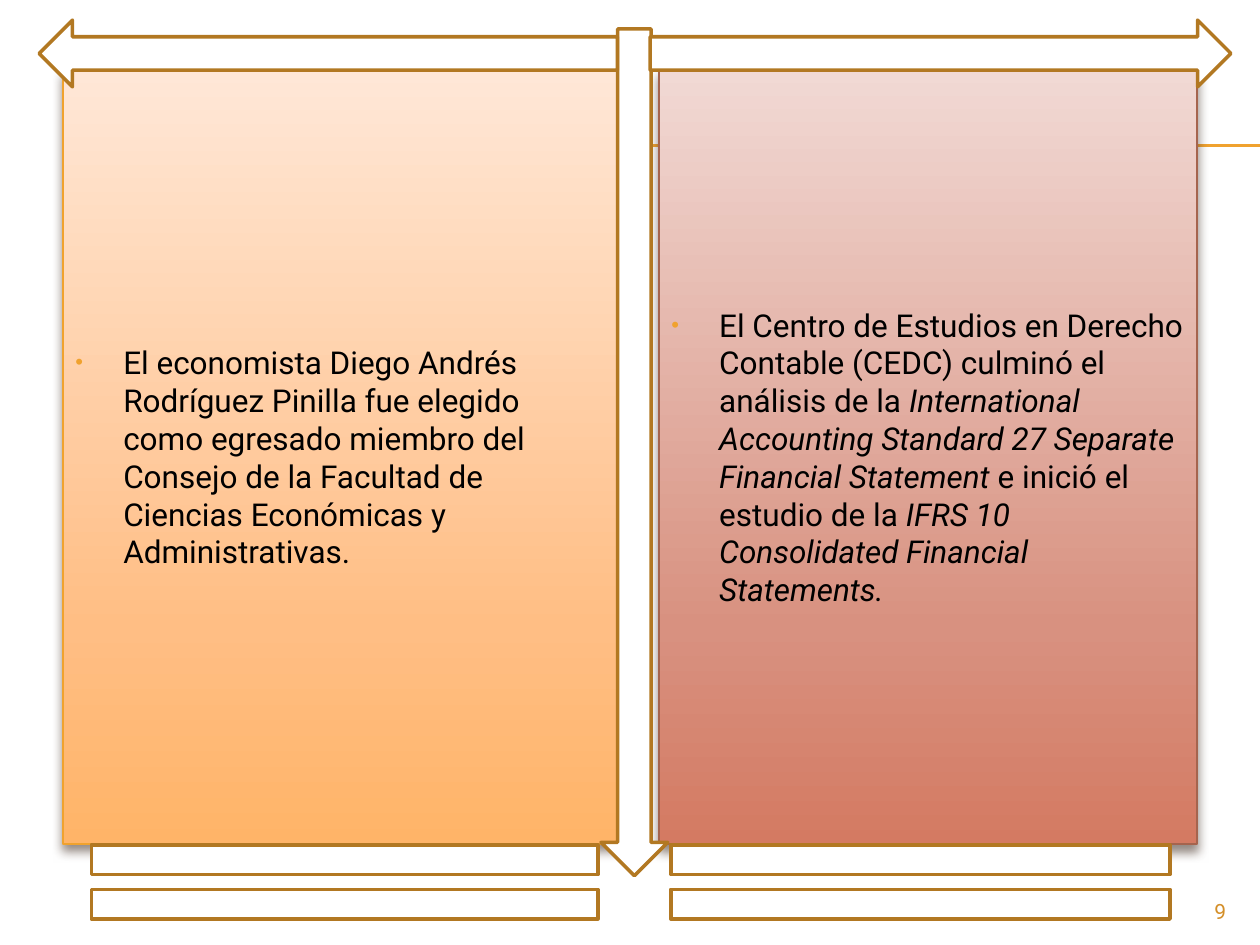
from lxml import etree
from pptx import Presentation
from pptx.dml.color import RGBColor
from pptx.enum.shapes import MSO_CONNECTOR, MSO_SHAPE
from pptx.enum.text import MSO_ANCHOR, PP_ALIGN
from pptx.oxml.ns import qn
from pptx.util import Inches, Pt

RECTANGLE = MSO_SHAPE.RECTANGLE
STRAIGHT = MSO_CONNECTOR.STRAIGHT
MIDDLE, TOP = MSO_ANCHOR.MIDDLE, MSO_ANCHOR.TOP
LEFT, RIGHT = PP_ALIGN.LEFT, PP_ALIGN.RIGHT

FONT = "Roboto"
AMBER, BRONZE, WHITE = "F0A22E", "B27822", "FFFFFF"
SHADOW = "4E3B30"
RULE_HEIGHTS = (1.15, 1.16)

# Runs are (text, italic); gradient stops are (percent, colour).
PANELS = [
    {
        "left": 0.5, "width": 4.42, "outline": AMBER,
        "stops": [(0, "FFE7D7"), (72, "FFBE84"), (100, "FFB468")],
        "runs": [
            ("El economista Diego Andrés Rodríguez Pinilla fue elegido como "
             "egresado miembro del Consejo de la Facultad de Ciencias "
             "Económicas y Administrativas.", False),
        ],
    },
    {
        "left": 5.23, "width": 4.27, "outline": "A5644E",
        "stops": [(0, "F1D9D4"), (72, "D89180"), (100, "D47A62")],
        "runs": [
            ("El Centro de Estudios en Derecho Contable (CEDC) culminó el "
             "análisis de la ", False),
            ("International Accounting Standard 27 Separate Financial "
             "Statement ", True),
            ("e inició el estudio de la ", False),
            ("IFRS 10 Consolidated Financial Statements.", True),
        ],
    },
]
PANEL_TOP, PANEL_HEIGHT = 0.55, 6.15

FRAME = [
    (MSO_SHAPE.DOWN_ARROW, (4.77, 0.23, 0.53, 6.72)),
    (MSO_SHAPE.RIGHT_ARROW, (5.16, 0.16, 4.61, 0.53)),
    (MSO_SHAPE.LEFT_ARROW, (0.31, 0.16, 4.59, 0.53)),
    (MSO_SHAPE.MATH_EQUAL, (0, 6.5, 5.47, 1)),
    (MSO_SHAPE.MATH_EQUAL, (4.61, 6.5, 5.39, 1)),
]
PAGE_NUMBER = "9"


def rgb(value):
    return RGBColor.from_string(value)


def add_outlined(slide, kind, box, outline, weight):
    shape = slide.shapes.add_shape(kind, *map(Inches, box))
    shape.shadow.inherit = False
    shape.fill.solid()
    shape.fill.fore_color.rgb = rgb(WHITE)
    shape.line.color.rgb = rgb(outline)
    shape.line.width = Pt(weight)
    return shape


def fill_downward(shape, stops):
    """Fill with a gradient that runs from top to bottom."""
    shape.fill.gradient()
    shape.fill.gradient_angle = 270
    stop_list = shape._element.spPr.find(".//" + qn("a:gsLst"))
    for old_stop in list(stop_list):
        stop_list.remove(old_stop)
    for percent, color in stops:
        stop = etree.SubElement(stop_list, qn("a:gs"), pos=str(percent * 1000))
        etree.SubElement(stop, qn("a:srgbClr"), val=color)


def drop_shadow(shape):
    effects = shape._element.spPr.find(qn("a:effectLst"))
    shadow = etree.SubElement(
        effects, qn("a:outerShdw"), blurRad=str(Pt(6)), dist=str(Pt(4)),
        dir="5400000", rotWithShape="0")
    color = etree.SubElement(shadow, qn("a:srgbClr"), val=SHADOW)
    etree.SubElement(color, qn("a:alpha"), val="60000")


def add_bullet(paragraph, indent):
    properties = paragraph._p.get_or_add_pPr()
    properties.set("marL", str(Inches(indent)))
    properties.set("indent", str(-Inches(indent)))
    color = etree.SubElement(properties, qn("a:buClr"))
    etree.SubElement(color, qn("a:srgbClr"), val=AMBER)
    etree.SubElement(properties, qn("a:buSzPct"), val="70000")
    etree.SubElement(properties, qn("a:buFont"), typeface="Arial")
    etree.SubElement(properties, qn("a:buChar"), char="•")


def write(shape, runs, size, color, align=LEFT, anchor=TOP, bullet_indent=None):
    frame = shape.text_frame
    frame.word_wrap = True
    frame.vertical_anchor = anchor
    paragraph = frame.paragraphs[0]
    paragraph.alignment = align
    if bullet_indent:
        add_bullet(paragraph, bullet_indent)
    for text, italic in runs:
        run = paragraph.add_run()
        run.text = text
        run.font.name = FONT
        run.font.size = Pt(size)
        run.font.italic = italic
        run.font.color.rgb = rgb(color)


def add_rule(slide, height):
    rule = slide.shapes.add_connector(
        STRAIGHT, Inches(0.56), Inches(height), Inches(10), Inches(height))
    rule.line.color.rgb = rgb(AMBER)
    rule.line.width = Pt(0.75)
    etree.SubElement(rule._element.spPr, qn("a:effectLst"))


def main():
    deck = Presentation()
    deck.slide_width, deck.slide_height = Inches(10), Inches(7.5)
    slide = deck.slides.add_slide(deck.slide_layouts[6])

    for height in RULE_HEIGHTS:
        add_rule(slide, height)

    for panel in PANELS:
        box = (panel["left"], PANEL_TOP, panel["width"], PANEL_HEIGHT)
        card = add_outlined(slide, RECTANGLE, box, panel["outline"], 0.79)
        fill_downward(card, panel["stops"])
        drop_shadow(card)
        write(card, panel["runs"], size=18, color="000000", anchor=MIDDLE,
              bullet_indent=0.38)

    for kind, box in FRAME:
        add_outlined(slide, kind, box, BRONZE, 2)

    page = slide.shapes.add_textbox(*map(Inches, (9, 7.08, 0.83, 0.27)))
    write(page, [(PAGE_NUMBER, False)], size=12, color="D48F29", align=RIGHT)

    deck.save("out.pptx")


if __name__ == "__main__":
    main()
